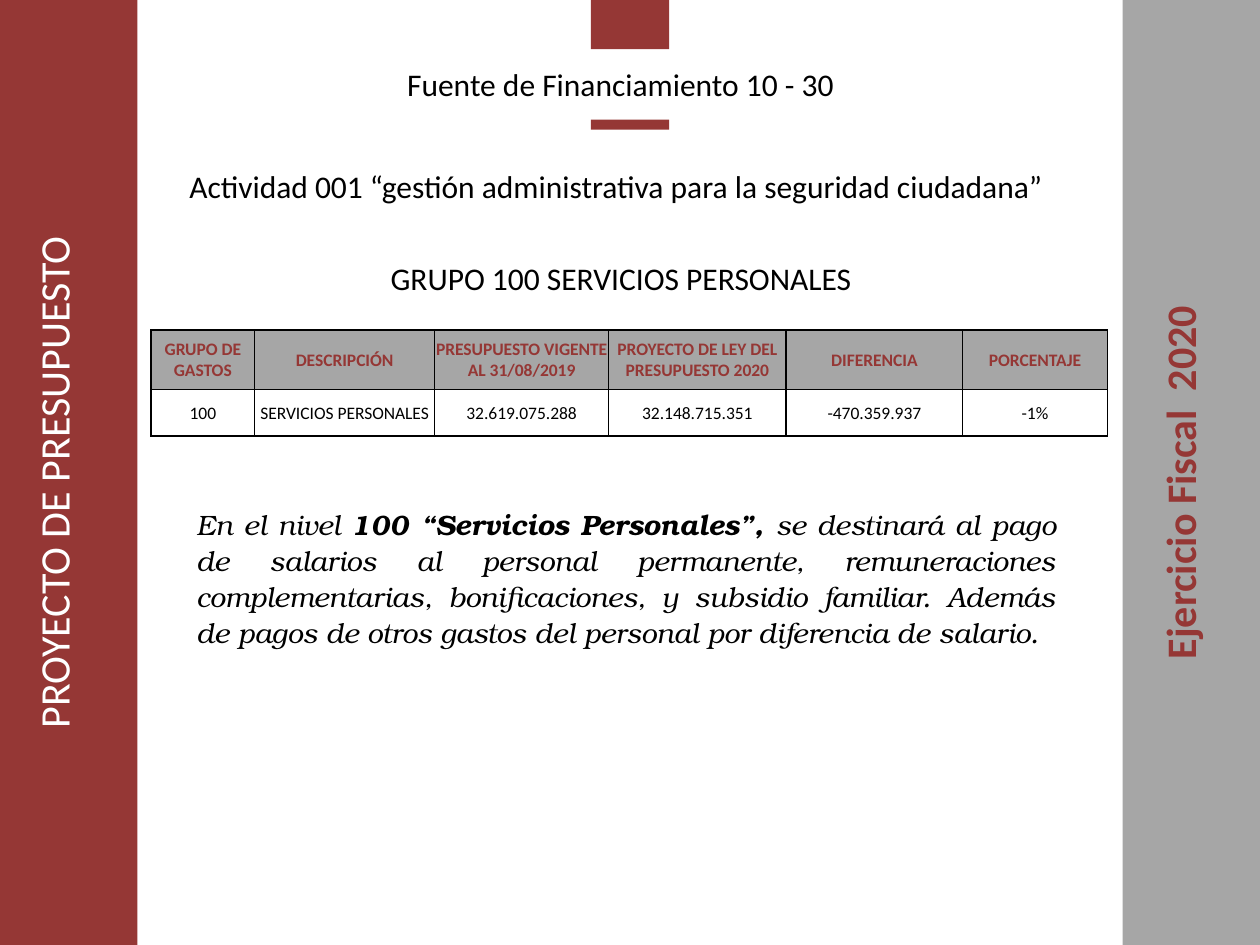
from lxml import etree
from pptx import Presentation
from pptx.dml.color import RGBColor
from pptx.enum.shapes import MSO_SHAPE
from pptx.enum.text import MSO_ANCHOR, PP_ALIGN
from pptx.oxml.ns import qn
from pptx.util import Inches, Pt

RECT = MSO_SHAPE.RECTANGLE
CENTER = PP_ALIGN.CENTER
JUSTIFY = PP_ALIGN.JUSTIFY
MIDDLE = MSO_ANCHOR.MIDDLE
RED, GRAY, BLACK, WHITE = "953735", "A6A6A6", "000000", "FFFFFF"
SANS, SERIF = "Calibri", "TeX Gyre Bonum"

COLUMN_WIDTHS = [0.82, 1.43, 1.38, 1.41, 1.4, 1.15]
ROW_HEIGHTS = [0.47, 0.37]
BUDGET_ROWS = [
    ["GRUPO DE GASTOS", "DESCRIPCIÓN", "PRESUPUESTO VIGENTE AL 31/08/2019",
     "PROYECTO DE LEY DEL PRESUPUESTO 2020", "DIFERENCIA", "PORCENTAJE"],
    ["100", "SERVICIOS PERSONALES", "32.619.075.288", "32.148.715.351",
     "-470.359.937", "-1%"],
]
EXPLANATION = [
    ("En el nivel ", False),
    ("100 “Servicios Personales”, ", True),
    ("se destinará al pago de salarios al personal permanente, "
     "remuneraciones complementarias, bonificaciones, y subsidio familiar. "
     "Además de pagos de otros gastos del personal por diferencia de salario.",
     False),
]


def rgb(color):
    return RGBColor.from_string(color)


def format_run(r, size, color=BLACK, font=SANS, bold=False, italic=False):
    r.font.size = Pt(size)
    r.font.name = font
    r.font.color.rgb = rgb(color)
    r.font.bold = bold
    r.font.italic = italic


def add_block(slide, left, top, width, height, color):
    s = slide.shapes.add_shape(RECT, Inches(left), Inches(top),
                               Inches(width), Inches(height))
    s.shadow.inherit = False
    s.fill.solid()
    s.fill.fore_color.rgb = rgb(color)
    s.line.fill.background()


def add_text_box(slide, left, top, width, height):
    s = slide.shapes.add_textbox(Inches(left), Inches(top),
                                 Inches(width), Inches(height))
    s.text_frame.word_wrap = True
    return s


def add_heading(slide, left, top, width, height, text):
    s = add_text_box(slide, left, top, width, height)
    p = s.text_frame.paragraphs[0]
    p.text = text
    p.alignment = CENTER
    format_run(p.runs[0], 18)


def add_side_title(slide, left, text, color, bold):
    s = add_text_box(slide, left, 0.16, 0.61, 7.34)
    s.element.txBody.find(qn("a:bodyPr")).set("vert", "vert270")
    p = s.text_frame.paragraphs[0]
    p.text = text
    p.alignment = CENTER
    p.space_after = Pt(6)
    format_run(p.runs[0], 24, color, bold=bold)


def add_explanation(slide):
    s = add_text_box(slide, 1.46, 3.96, 7.02, 1.25)
    p = s.text_frame.paragraphs[0]
    p.alignment = JUSTIFY
    p.line_spacing = 1.07
    for text, bold in EXPLANATION:
        r = p.add_run()
        r.text = text
        format_run(r, 16, font=SERIF, bold=bold, italic=True)


def set_borders(cell):
    props = cell._tc.get_or_add_tcPr()
    for side in ("a:lnL", "a:lnR", "a:lnT", "a:lnB"):
        line = etree.SubElement(props, qn(side), w=str(Pt(1)))
        fill = etree.SubElement(line, qn("a:solidFill"))
        etree.SubElement(fill, qn("a:srgbClr"), val=BLACK)


def format_cell(cell, text, is_header):
    set_borders(cell)
    if is_header:
        cell.fill.solid()
        cell.fill.fore_color.rgb = rgb(GRAY)
    else:
        cell.fill.background()
    cell.vertical_anchor = MIDDLE
    cell.margin_left = cell.margin_right = cell.margin_top = Inches(0.01)
    cell.margin_bottom = 0
    p = cell.text_frame.paragraphs[0]
    p.text = text
    p.alignment = CENTER
    format_run(p.runs[0], 10, RED if is_header else BLACK, bold=is_header)


def add_budget_table(slide):
    frame = slide.shapes.add_table(
        len(ROW_HEIGHTS), len(COLUMN_WIDTHS), Inches(1.2), Inches(2.62),
        Inches(sum(COLUMN_WIDTHS)), Inches(sum(ROW_HEIGHTS)))
    table = frame.table
    for column, width in zip(table.columns, COLUMN_WIDTHS):
        column.width = Inches(width)
    for i, (row, height) in enumerate(zip(table.rows, ROW_HEIGHTS)):
        row.height = Inches(height)
        for cell, text in zip(row.cells, BUDGET_ROWS[i]):
            format_cell(cell, text, i == 0)


def main():
    prs = Presentation()
    prs.slide_width, prs.slide_height = Inches(10), Inches(7.5)
    slide = prs.slides.add_slide(prs.slide_layouts[6])

    add_block(slide, 0, 0, 1.09, 7.5, RED)
    add_block(slide, 8.91, 0, 1.09, 7.5, GRAY)
    add_block(slide, 4.69, 0, 0.62, 0.39, RED)
    add_block(slide, 4.69, 0.95, 0.62, 0.08, RED)

    add_side_title(slide, 9.11, "Ejercicio Fiscal  2020", RED, True)
    add_side_title(slide, 0.17, "PROYECTO DE PRESUPUESTO", WHITE, False)
    add_heading(slide, 1.09, 0.47, 7.67, 0.4,
                "Fuente de Financiamiento 10 - 30")
    add_heading(slide, 1.14, 1.28, 7.5, 0.71,
                "Actividad 001 “gestión administrativa para la seguridad ciudadana”")
    add_explanation(slide)
    add_heading(slide, 1.18, 2.01, 7.5, 0.4, "GRUPO 100 SERVICIOS PERSONALES")
    add_budget_table(slide)

    prs.save("out.pptx")


if __name__ == "__main__":
    main()
